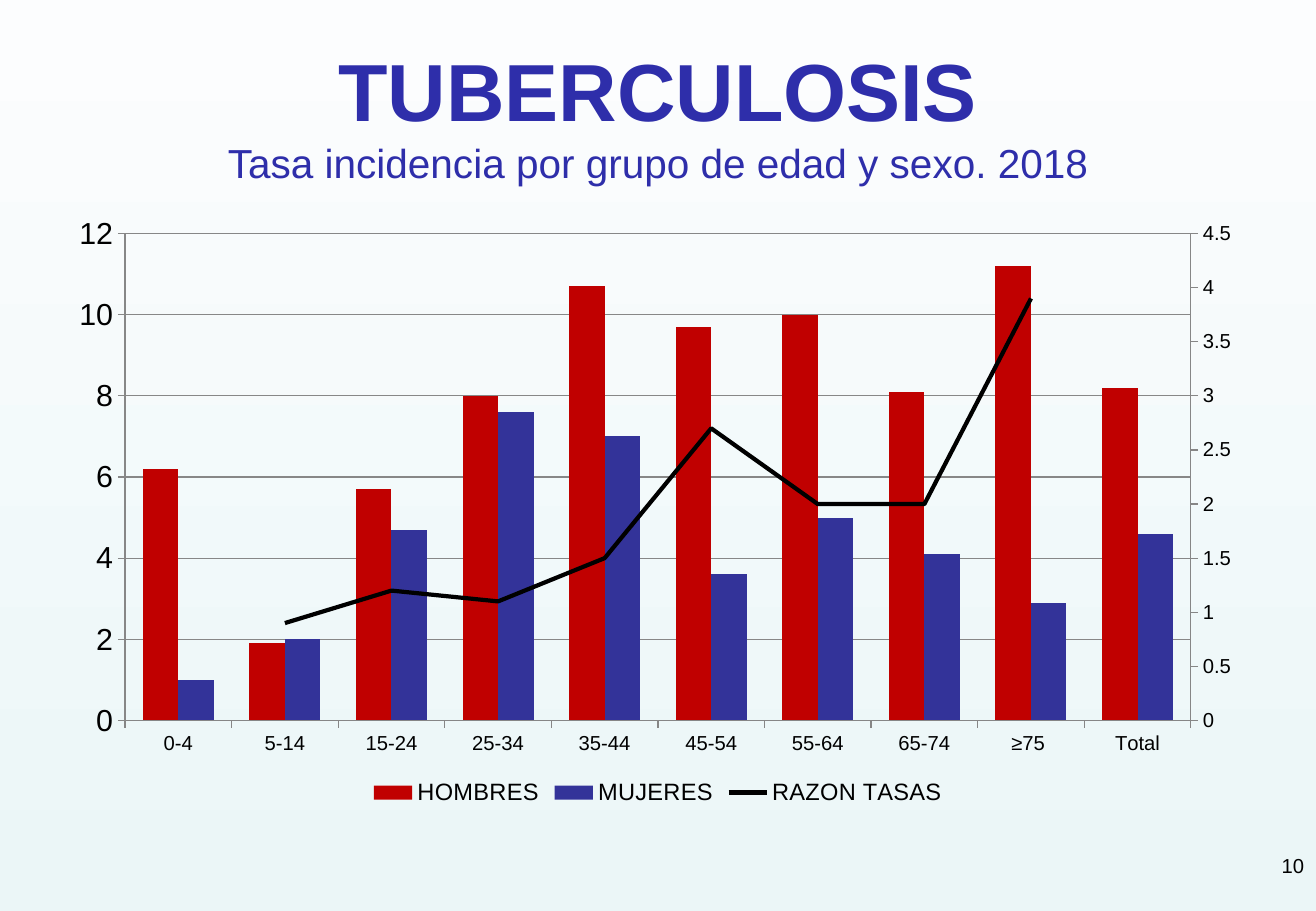
from copy import deepcopy

from lxml import etree
from pptx import Presentation
from pptx.chart.axis import ValueAxis
from pptx.chart.data import CategoryChartData
from pptx.dml.color import RGBColor
from pptx.enum.chart import XL_CHART_TYPE as CT, XL_LEGEND_POSITION as LP
from pptx.enum.chart import XL_MARKER_STYLE as MS, XL_TICK_MARK as TM
from pptx.enum.text import MSO_ANCHOR, PP_ALIGN
from pptx.oxml import parse_xml
from pptx.oxml.ns import nsdecls, qn
from pptx.util import Inches, Pt

W, H = 10.83, 7.5
FONT, BLACK, GREY, TITLE = "Arial", "000000", "868686", "2E2EAA"
AGES = ["0-4", "5-14", "15-24", "25-34", "35-44", "45-54", "55-64", "65-74", "≥75 ", "Total"]
SERIES = [
    ("HOMBRES", "C00000", [6.2, 1.9, 5.7, 8, 10.7, 9.7, 10, 8.1, 11.2, 8.2]),
    ("MUJERES", "333399", [1, 2, 4.7, 7.6, 7, 3.6, 5, 4.1, 2.9, 4.6]),
    ("RAZON TASAS", BLACK, [None, 0.9, 1.2, 1.1, 1.5, 2.7, 2, 2, 3.9, None]),
]


def rgb(value):
    """Turn a hex string into a colour."""
    return RGBColor.from_string(value)


def style_font(font, size, color=BLACK, bold=False):
    """Set face, size, colour and weight of a font."""
    font.name, font.size, font.bold = FONT, Pt(size), bold
    font.color.rgb = rgb(color)


def style_line(line, color, width):
    """Set colour and width of a line."""
    line.color.rgb = rgb(color)
    line.width = Pt(width)


def paint_background(s):
    """Fill the slide with a vertical gradient."""
    fill = s.background.fill
    fill.gradient()
    fill.gradient_angle = 270
    for stop, color in zip(fill.gradient_stops, ("FCFDFE", "EBF6F7")):
        stop.color.rgb = rgb(color)


def add_title(s, box, heading, subtitle):
    """Put heading and subtitle in the title placeholder."""
    sp = s.shapes.title
    sp.left, sp.top, sp.width, sp.height = box
    tf = sp.text_frame
    tf.vertical_anchor = MSO_ANCHOR.MIDDLE
    p = tf.paragraphs[0]
    p.alignment = PP_ALIGN.CENTER
    p.line_spacing = 1.0
    r = p.add_run()
    r.text = heading
    style_font(r.font, 48, TITLE, True)
    p.add_line_break()
    r = p.add_run()
    r.text = subtitle
    style_font(r.font, 24, TITLE)


def style_axis(axis):
    """Give an axis outward ticks, small labels and a grey line."""
    axis.major_tick_mark, axis.minor_tick_mark = TM.OUTSIDE, TM.NONE
    style_font(axis.tick_labels.font, 12)
    style_line(axis.format.line, GREY, 0.75)


def scale_axis(axis, top, step):
    """Run a value axis from zero to top in equal steps."""
    axis.minimum_scale, axis.maximum_scale, axis.major_unit = 0, top, step
    axis.tick_labels.number_format = "General"
    axis.tick_labels.number_format_is_linked = False


def move_last_to_line(chart):
    """Move the last series to a line on a right axis, and return that axis."""
    plot_area = chart._chartSpace.chart.plotArea
    bar = plot_area.find(qn("c:barChart"))
    ser = bar.findall(qn("c:ser"))[-1]
    line = parse_xml(
        f'<c:lineChart {nsdecls("c")}><c:grouping val="standard"/><c:varyColors val="0"/>'
        '<c:marker val="1"/><c:axId val="501"/><c:axId val="502"/></c:lineChart>')
    for flag in ser.findall(qn("c:invertIfNegative")):
        ser.remove(flag)
    line.insert(2, ser)
    bar.addnext(line)
    cat, val = (plot_area.find(qn(tag)) for tag in ("c:catAx", "c:valAx"))
    cat2, val2 = deepcopy(cat), deepcopy(val)
    for axis, own, other in ((cat2, "501", "502"), (val2, "502", "501")):
        axis.find(qn("c:axId")).set("val", own)
        axis.find(qn("c:crossAx")).set("val", other)
    cat2.find(qn("c:delete")).set("val", "1")
    val2.find(qn("c:axPos")).set("val", "r")
    val2.find(qn("c:crosses")).set("val", "max")
    val.addnext(val2)
    val2.addnext(cat2)
    return ValueAxis(val2)


def place_plot(chart, **shares):
    """Fix the inner plot area as shares of the chart."""
    plot_area = chart._chartSpace.chart.plotArea
    for old in plot_area.findall(qn("c:layout")):
        plot_area.remove(old)
    layout = etree.Element(qn("c:layout"))
    manual = etree.SubElement(layout, qn("c:manualLayout"))
    settings = {"layoutTarget": "inner", "xMode": "edge", "yMode": "edge", **shares}
    for tag, value in settings.items():
        etree.SubElement(manual, qn(f"c:{tag}")).set("val", str(value))
    plot_area.insert(0, layout)


def add_rates_chart(s, box):
    """Draw rates as columns and their ratio as a line."""
    data = CategoryChartData()
    data.categories = AGES
    for name, _, values in SERIES:
        data.add_series(name, values)
    chart = s.shapes.add_chart(CT.COLUMN_CLUSTERED, *box, data).chart
    style_font(chart.font, 18)
    chart.has_title = False
    chart.has_legend = True
    chart.legend.position, chart.legend.include_in_layout = LP.BOTTOM, False
    style_font(chart.legend.font, 14)

    right = move_last_to_line(chart)
    left = chart.value_axis
    for axis in (chart.category_axis, left, right):
        style_axis(axis)
    scale_axis(left, 12, 2)
    scale_axis(right, 4.5, 0.5)
    right.has_major_gridlines = False
    left.has_major_gridlines = True
    style_line(left.major_gridlines.format.line, GREY, 0.75)

    bars, lines = chart.plots
    bars.gap_width, bars.overlap, bars.vary_by_categories = 100, 0, False
    for ser, (_, color, _) in zip(bars.series, SERIES):
        ser.format.fill.solid()
        ser.format.fill.fore_color.rgb = rgb(color)
    ratio = lines.series[0]
    ratio.smooth = False
    ratio.marker.style = MS.NONE
    style_line(ratio.format.line, SERIES[-1][1], 2.5)
    place_plot(chart, x=0.05, y=0.04, w=0.9, h=0.81)


def add_page_number(s, box, number):
    """Write the page number at the right of its box."""
    tf = s.shapes.add_textbox(*box).text_frame
    tf.word_wrap = True
    p = tf.paragraphs[0]
    p.text, p.alignment = number, PP_ALIGN.RIGHT
    style_font(p.font, 12)


def main():
    """Build the slide and save it."""
    prs = Presentation()
    prs.slide_width, prs.slide_height = Inches(W), Inches(H)
    s = prs.slides.add_slide(prs.slide_layouts[5])

    def box(*shares):
        """Scale shares of the slide to lengths."""
        return [Inches(share * size) for share, size in zip(shares, (W, H, W, H))]

    paint_background(s)
    add_rates_chart(s, box(0.05, 0.23, 0.9, 0.66))
    add_page_number(s, box(0.77, 0.93, 0.23, 0.07), "10")
    add_title(s, box(0.05, 0.04, 0.9, 0.17), "TUBERCULOSIS",
              "Tasa incidencia por grupo de edad y sexo. 2018")
    prs.save("out.pptx")


if __name__ == "__main__":
    main()
